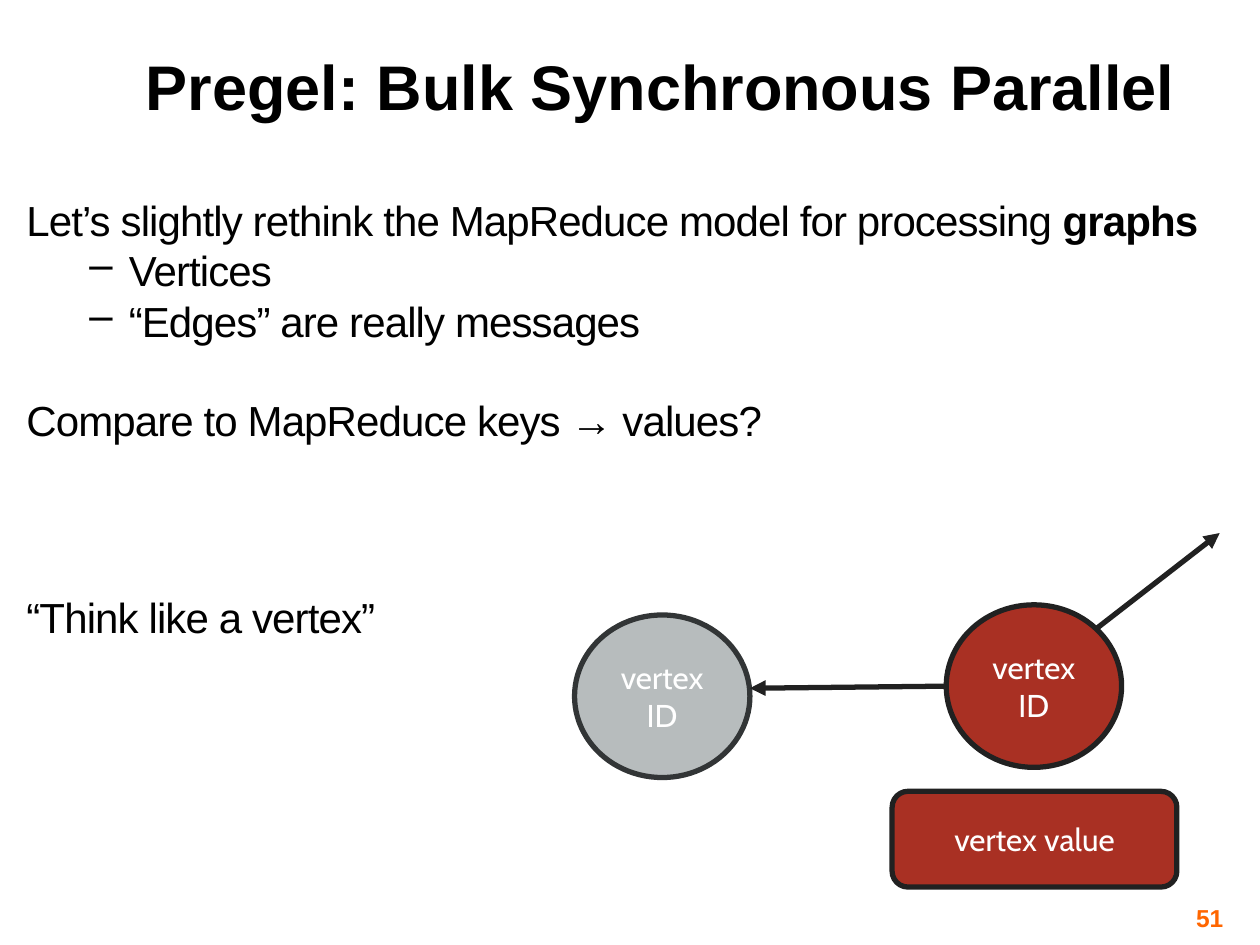
from pptx import Presentation
from pptx import util as u
from pptx.dml.color import RGBColor
from pptx.enum import shapes, text
from pptx.oxml.ns import qn
from lxml import etree

Pt = u.Pt
BLACK = RGBColor(0x00, 0x00, 0x00)
WHITE = RGBColor(0xFF, 0xFF, 0xFF)
RED = RGBColor(0xA9, 0x30, 0x23)
GRAY = RGBColor(0xB7, 0xBC, 0xBD)
DARK = RGBColor(0x21, 0x21, 0x21)
SLATE = RGBColor(0x32, 0x35, 0x36)
ORANGE = RGBColor(0xFF, 0x66, 0x00)


def set_font(p, name, size, color, bold=False):
    p.font.name = name
    p.font.size = Pt(size)
    p.font.color.rgb = color
    p.font.bold = bold


def add_text(s, left, top, width, height, inset=None):
    tf = s.shapes.add_textbox(Pt(left), Pt(top), Pt(width), Pt(height)).text_frame
    tf.word_wrap = True
    if inset is not None:
        tf.margin_left = tf.margin_right = Pt(inset)
        tf.margin_top = tf.margin_bottom = Pt(inset)
    return tf


prs = Presentation()
prs.slide_width, prs.slide_height = Pt(720), Pt(540)
s = prs.slides.add_slide(prs.slide_layouts[6])

p = add_text(s, 76.3, 23.8, 613.4, 77.8).paragraphs[0]
p.text = "Pregel: Bulk Synchronous Parallel"
set_font(p, "Arial", 36, BLACK, True)

tf = add_text(s, 12.2, 113.8, 689.8, 396, 2.9)
GAP, PITCH = 5.8, 27.86
body = [
    (["Let’s slightly rethink the MapReduce model for processing ", "graphs"], False, 0),
    (["Vertices"], True, 0),
    (["“Edges” are really messages"], True, 0),
    (["Compare to MapReduce keys → values?"], False, 1),
    (["“Think like a vertex”"], False, 3),
]
for i, (runs, bulleted, skipped) in enumerate(body):
    p = tf.add_paragraph() if i else tf.paragraphs[0]
    set_font(p, "Arial", 24, BLACK)
    p.line_spacing = 0.8
    p.space_before = Pt(GAP + skipped * PITCH)
    for j, words in enumerate(runs):
        r = p.add_run()
        r.text = words
        r.font.bold = True if j else None
        r.font._element.set("spc", "-50")
    if bulleted:
        p.level = 1
        pPr = p._p.get_or_add_pPr()
        pPr.set("marL", str(Pt(58.5)))
        pPr.set("indent", str(Pt(-22.5)))
        bullet = etree.Element(qn("a:buChar"), char="–")
        pPr.find(qn("a:defRPr")).addprevious(bullet)

OVAL = shapes.MSO_SHAPE.OVAL
ROUNDED = shapes.MSO_SHAPE.ROUNDED_RECTANGLE
nodes = [
    (OVAL, 540.7, 345.6, 100.2, 92.9, RED, DARK, "vertex\vID"),
    (ROUNDED, 509.8, 452.2, 162.7, 54.7, RED, DARK, "vertex value"),
    (OVAL, 328.3, 351.4, 100.2, 92.9, GRAY, SLATE, "vertex\vID"),
]
for kind, left, top, width, height, fill, line, label in nodes:
    sp = s.shapes.add_shape(kind, Pt(left), Pt(top), Pt(width), Pt(height))
    sp.shadow.inherit = False
    sp.fill.solid()
    sp.fill.fore_color.rgb = fill
    sp.line.color.rgb = line
    sp.line.width = Pt(3)
    tf = sp.text_frame
    tf.word_wrap = True
    tf.vertical_anchor = text.MSO_ANCHOR.MIDDLE
    p = tf.paragraphs[0]
    p.text = label
    p.alignment = text.PP_ALIGN.CENTER
    set_font(p, "Cabin", 18, WHITE)

for x1, y1, x2, y2 in [(626.4, 359.3, 697, 304.6), (540.7, 392.1, 428.5, 393.3)]:
    cx = s.shapes.add_connector(shapes.MSO_CONNECTOR.STRAIGHT, Pt(x1), Pt(y1), Pt(x2), Pt(y2))
    cx.line.color.rgb = DARK
    cx.line.width = Pt(3)
    etree.SubElement(cx.line._get_or_add_ln(), qn("a:tailEnd"), type="triangle")
    etree.SubElement(cx._element.spPr, qn("a:effectLst"))

tf = add_text(s, 534.2, 516.2, 167.8, 16.6, 2.9)
tf.vertical_anchor = text.MSO_ANCHOR.MIDDLE
p = tf.paragraphs[0]
p.text = "51"
p.alignment = text.PP_ALIGN.RIGHT
set_font(p, "Arial", 14, ORANGE, True)

prs.save("out.pptx")
